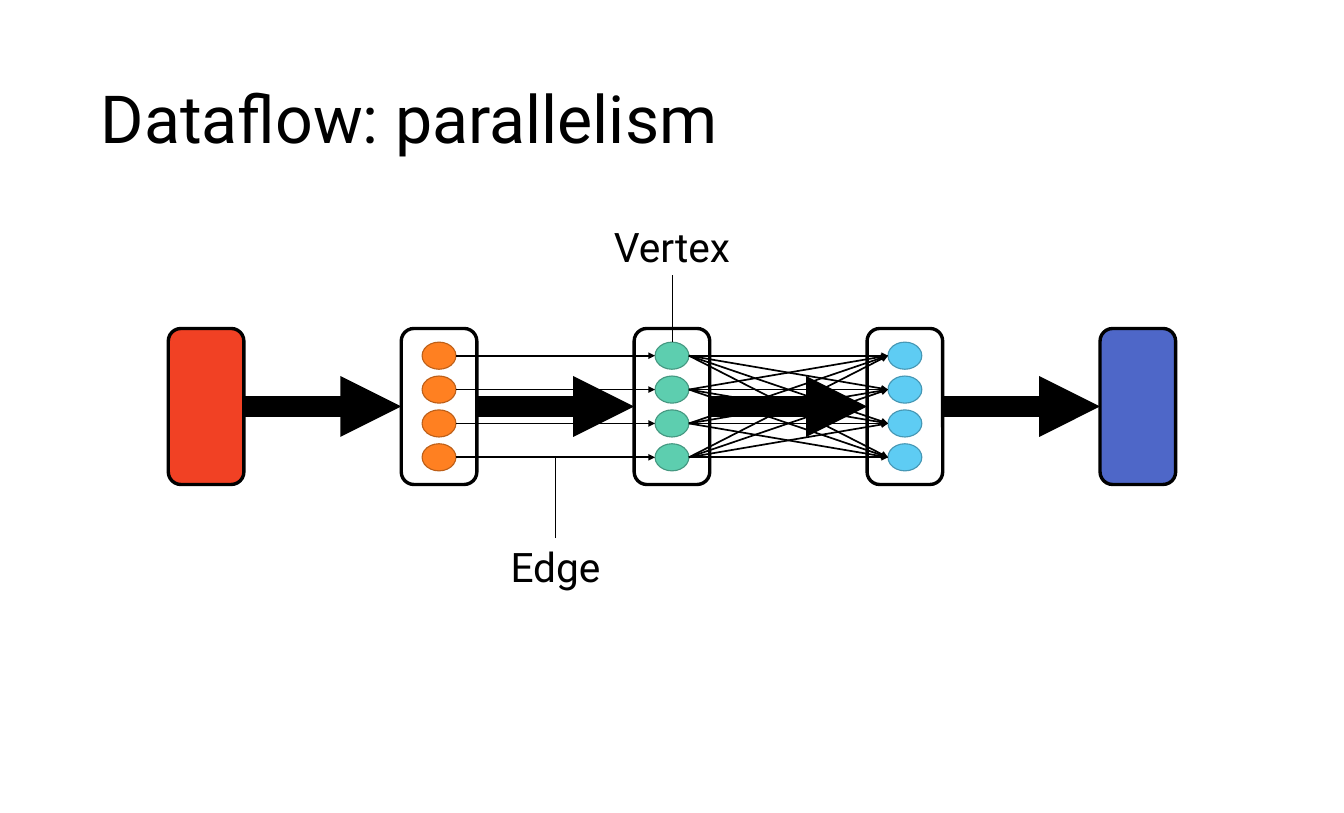
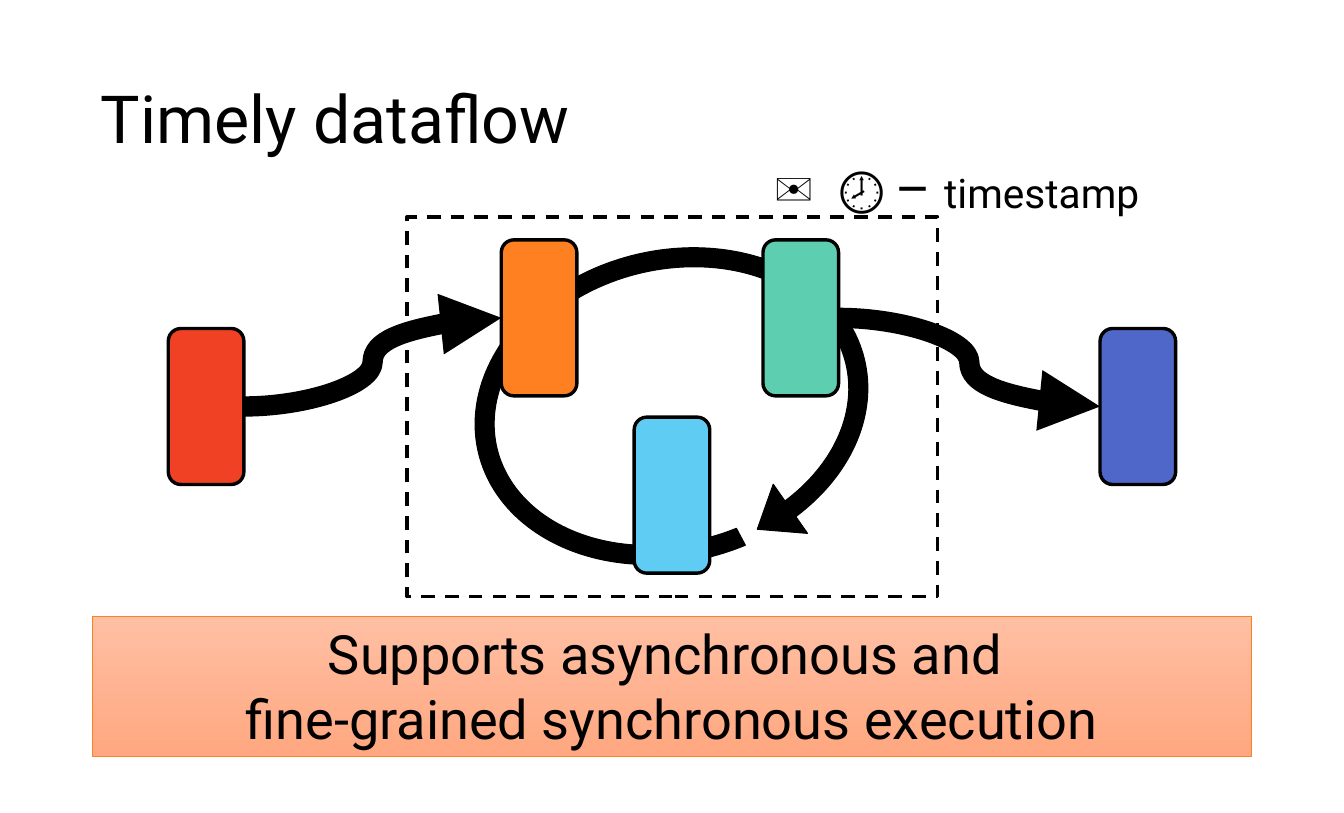
from lxml import etree
from pptx import Presentation
from pptx.dml.color import RGBColor
from pptx.enum import dml, shapes, text
from pptx.oxml import ns
from pptx.util import Pt

BLACK = RGBColor(0x00, 0x00, 0x00)
WHITE = RGBColor(0xFF, 0xFF, 0xFF)
RED = RGBColor(0xF1, 0x41, 0x24)
ORANGE = RGBColor(0xFF, 0x80, 0x21)
GREEN = RGBColor(0x5D, 0xCE, 0xAF)
CYAN = RGBColor(0x5E, 0xCC, 0xF3)
BLUE = RGBColor(0x4E, 0x67, 0xC8)
ORANGE_EDGE = RGBColor(0xBD, 0x5F, 0x18)
GREEN_EDGE = RGBColor(0x45, 0x98, 0x81)
CYAN_EDGE = RGBColor(0x46, 0x97, 0xB4)
BANNER_TOP = RGBColor(0xFF, 0xBF, 0xA3)
BANNER_BOTTOM = RGBColor(0xFF, 0xA8, 0x81)

FONT = "Roboto"
SLIDE_W, SLIDE_H = 1190.88, 720
MARGIN, CONTENT_W = 82, 1026.7
MIDDLE_X, MIDDLE_Y = SLIDE_W / 2, SLIDE_H / 2
STAGE_W, STAGE_H, STAGE_STEP = 67, 138.2, 206.4
VERTEX_W, VERTEX_H, VERTEX_STEP = 30, 24, 30
LABEL_W, LABEL_H = 381.6, 51
STAGE_XS = [MIDDLE_X + STAGE_STEP * (i - 2) for i in range(5)]
VERTEX_YS = [MIDDLE_Y + VERTEX_STEP * (i - 1.5) for i in range(4)]

SHAPE = shapes.MSO_SHAPE
CONNECTOR = shapes.MSO_CONNECTOR
ALIGN = text.PP_ALIGN
TOP, LEFT, BOTTOM, RIGHT = range(4)


def add_text(frame, content, size=36, bold=False, align=ALIGN.LEFT, spacing=None):
    paragraph = frame.paragraphs[0]
    paragraph.alignment = align
    paragraph.line_spacing = spacing
    for i, line in enumerate(content.split("\n")):
        if i:
            paragraph.add_line_break()
        run = paragraph.add_run()
        run.text = line
        run.font.name = FONT
        run.font.size = Pt(size)
        run.font.bold = bold
        run.font.color.rgb = BLACK


def add_titled_slide(deck, heading):
    slide = deck.slides.add_slide(deck.slide_layouts[5])
    title = slide.shapes.title
    title.left, title.top = Pt(MARGIN), Pt(38.2)
    title.width, title.height = Pt(CONTENT_W), Pt(139)
    title.text_frame.auto_size = text.MSO_AUTO_SIZE.NONE
    title.text_frame.vertical_anchor = text.MSO_ANCHOR.MIDDLE
    add_text(title.text_frame, heading, size=58.7, spacing=0.9)
    return slide


def add_figure(slide, preset, x, y, w, h, fill=None, line=BLACK, weight=1):
    figure = slide.shapes.add_shape(preset, Pt(x), Pt(y), Pt(w), Pt(h))
    figure.shadow.inherit = False
    if fill is None:
        figure.fill.background()
    else:
        figure.fill.solid()
        figure.fill.fore_color.rgb = fill
    figure.line.color.rgb = line
    figure.line.width = Pt(weight)
    return figure


def add_stage(slide, x, y, fill):
    return add_figure(slide, SHAPE.ROUNDED_RECTANGLE, x - STAGE_W / 2, y - STAGE_H / 2,
                      STAGE_W, STAGE_H, fill, weight=3)


def add_vertices(slide, x, fill, line):
    for y in VERTEX_YS:
        add_figure(slide, SHAPE.OVAL, x - VERTEX_W / 2, y - VERTEX_H / 2,
                   VERTEX_W, VERTEX_H, fill, line)


def add_line(slide, start, end, weight, arrow=True, kind=CONNECTOR.STRAIGHT):
    line = slide.shapes.add_connector(kind, *(Pt(v) for v in (*start, *end)))
    line.line.color.rgb = BLACK
    line.line.width = Pt(weight)
    if arrow:
        etree.SubElement(line.line._get_or_add_ln(), ns.qn("a:tailEnd"), type="triangle")
    etree.SubElement(line.element.spPr, ns.qn("a:effectLst"))
    return line


def add_flow(slide, source, target, kind=CONNECTOR.STRAIGHT):
    flow = add_line(slide, (0, 0), (0, 0), 18, kind=kind)
    flow.begin_connect(source, RIGHT)
    flow.end_connect(target, LEFT)


def add_edge(slide, source_x, source_y, target_x, target_y):
    add_line(slide, (source_x + VERTEX_W / 2, source_y),
             (target_x - VERTEX_W / 2, target_y), 1.5)


def add_textbox(slide, x, y, w, h):
    frame_box = slide.shapes.add_textbox(Pt(x), Pt(y), Pt(w), Pt(h))
    frame_box.text_frame.word_wrap = True
    frame_box.text_frame.auto_size = text.MSO_AUTO_SIZE.SHAPE_TO_FIT_TEXT
    return frame_box


def add_callout(slide, caption, x, y, target_y, side):
    label = add_textbox(slide, x - LABEL_W / 2, y, LABEL_W, LABEL_H)
    add_text(label.text_frame, caption, align=ALIGN.CENTER)
    leader = add_line(slide, (x, y), (x, target_y), 0.5, arrow=False)
    leader.begin_connect(label, side)


def bring_to_front(stages):
    for stage in stages:
        stage.element.getparent().append(stage.element)


def build_parallelism(deck):
    slide = add_titled_slide(deck, "Dataflow: parallelism")
    stages = [add_stage(slide, x, MIDDLE_Y, fill)
              for x, fill in zip(STAGE_XS, (RED, WHITE, WHITE, WHITE, BLUE))]
    for source, target in zip(stages, stages[1:]):
        add_flow(slide, source, target)
    bring_to_front(stages)

    orange_x, green_x, cyan_x = STAGE_XS[1:4]
    add_vertices(slide, orange_x, ORANGE, ORANGE_EDGE)
    add_vertices(slide, green_x, GREEN, GREEN_EDGE)
    add_vertices(slide, cyan_x, CYAN, CYAN_EDGE)
    for source_y in VERTEX_YS:
        add_edge(slide, orange_x, source_y, green_x, source_y)
        for target_y in VERTEX_YS:
            add_edge(slide, green_x, source_y, cyan_x, target_y)

    add_callout(slide, "Vertex", green_x, 193, VERTEX_YS[0] - VERTEX_H / 2, BOTTOM)
    add_callout(slide, "Edge", (orange_x + green_x) / 2, 476.6, VERTEX_YS[-1], TOP)


def add_loop(slide):
    loop = add_figure(slide, SHAPE.CIRCULAR_ARROW, 401, 203.8, 388, 311.8, BLACK)
    loop.rotation = 346.2
    for i, value in enumerate((0.054, 8.578, 32.76, 45.488, 0.085)):
        loop.adjustments[i] = value


def add_banner(slide, message):
    banner = add_figure(slide, SHAPE.RECTANGLE, MARGIN, 545.8, CONTENT_W, 123.8,
                        line=ORANGE, weight=0.5)
    banner.fill.gradient()
    banner.fill.gradient_angle = 270
    for stop, colour, position in zip(banner.fill.gradient_stops,
                                      (BANNER_TOP, BANNER_BOTTOM), (0, 1)):
        stop.color.rgb = colour
        stop.position = position
    banner.text_frame.word_wrap = True
    banner.text_frame.vertical_anchor = text.MSO_ANCHOR.TOP
    add_text(banner.text_frame, message, size=48, align=ALIGN.CENTER)


def build_timely(deck):
    slide = add_titled_slide(deck, "Timely dataflow")
    add_loop(slide)
    source = add_stage(slide, STAGE_XS[0], MIDDLE_Y, RED)
    ingress = add_stage(slide, 477.7, 281.5, ORANGE)
    egress = add_stage(slide, 709.6, 281.5, GREEN)
    feedback = add_stage(slide, MIDDLE_X, 438.5, CYAN)
    sink = add_stage(slide, STAGE_XS[-1], MIDDLE_Y, BLUE)
    add_flow(slide, source, ingress, CONNECTOR.CURVE)
    add_flow(slide, egress, sink, CONNECTOR.CURVE)
    bring_to_front((source, ingress, egress, feedback, sink))

    scope = add_figure(slide, SHAPE.RECTANGLE, 360.7, 192.2, 470.2, 336.2, weight=3)
    scope.line.dash_style = dml.MSO_LINE.DASH
    add_banner(slide, "Supports asynchronous and \nfine-grained synchronous execution")

    message = add_textbox(slide, 662.4, 133.2, 82, 65.5)
    add_text(message.text_frame, "✉", size=48, bold=True, align=ALIGN.CENTER)
    legend = add_textbox(slide, 735.8, 133.2, 455, 65.5)
    for piece, size in (("🕗", 48), (" ", 36), ("– ", 48), ("timestamp", 36)):
        add_text(legend.text_frame, piece, size=size)


def main():
    deck = Presentation()
    deck.slide_width, deck.slide_height = Pt(SLIDE_W), Pt(SLIDE_H)
    build_parallelism(deck)
    build_timely(deck)
    deck.save("out.pptx")


if __name__ == "__main__":
    main()
